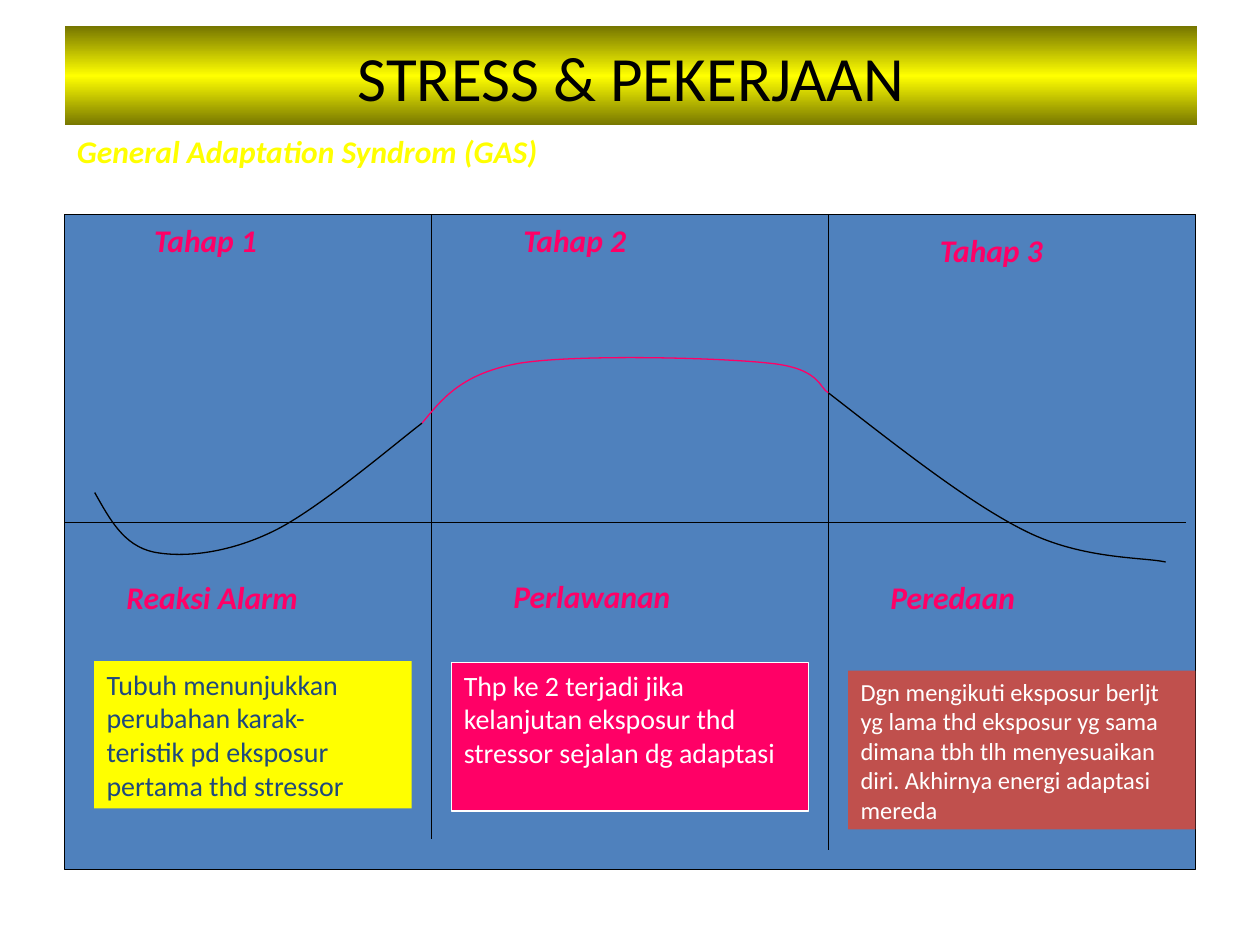
"""Build a slide on the three stages of the General Adaptation Syndrome."""
from copy import deepcopy
from dataclasses import dataclass
from typing import Optional

from lxml import etree
from pptx import Presentation
from pptx import util as u
from pptx.dml.color import RGBColor
from pptx.enum import shapes, text
from pptx.oxml.ns import qn

BLACK = RGBColor(0x00, 0x00, 0x00)
WHITE = RGBColor(0xFF, 0xFF, 0xFF)
BLUE = RGBColor(0x4F, 0x81, 0xBD)
NAVY = RGBColor(0x1F, 0x49, 0x7D)
PINK = RGBColor(0xFF, 0x00, 0x66)
RED = RGBColor(0xC0, 0x50, 0x4D)
YELLOW = RGBColor(0xFF, 0xFF, 0x00)
OLIVE = RGBColor(0x76, 0x76, 0x00)
FONT = "Calibri"
LINE_WIDTH = u.Pt(0.75)


@dataclass
class Box:
    left: float
    top: float
    width: float
    height: float

    def emu(self) -> list[int]:
        return [u.Cm(v) for v in (self.left, self.top, self.width, self.height)]


@dataclass
class Heading:
    text: str
    box: Box
    color: RGBColor = PINK


@dataclass
class Note:
    text: str
    box: Box
    fill: RGBColor
    color: RGBColor
    size: int
    line: Optional[RGBColor] = None
    right_inset: float = 0.25


@dataclass
class Curve:
    points: list[tuple[float, float]]
    color: RGBColor


PANEL = Box(1.3, 4.32, 22.8, 13.21)
TITLE = Box(1.31, 0.53, 22.82, 2)
AXES = [
    (1.3, 10.53, 23.9, 10.53),
    (8.7, 4.32, 8.7, 16.92),
    (16.7, 4.32, 16.7, 17.13),
]
HEADINGS = [
    Heading("General Adaptation Syndrom (GAS)", Box(1.3, 2.54, 9.8, 1.78), YELLOW),
    Heading("Tahap 1", Box(2.86, 4.33, 3.63, 1.02)),
    Heading("Tahap 2", Box(10.3, 4.33, 3.99, 1.02)),
    Heading("Tahap 3", Box(18.7, 4.53, 3.61, 1.02)),
    Heading("Reaksi Alarm", Box(2.3, 11.53, 5.41, 1.02)),
    Heading("Perlawanan", Box(10.1, 11.51, 4.6, 1.02)),
    Heading("Peredaan", Box(17.7, 11.53, 3.81, 1.02)),
]
NOTES = [
    Note("Tubuh menunjukkan perubahan karak- teristik pd eksposur pertama thd stressor",
         Box(1.9, 13.33, 6.4, 2.97), YELLOW, NAVY, 16, right_inset=0.9),
    Note("Thp ke 2 terjadi jika kelanjutan eksposur thd stressor sejalan dg adaptasi",
         Box(9.1, 13.35, 7.2, 3), PINK, WHITE, 16, WHITE),
    Note("Dgn mengikuti eksposur berljt yg lama thd eksposur yg sama dimana tbh tlh "
         "menyesuaikan diri. Akhirnya energi adaptasi mereda",
         Box(17.1, 13.52, 7, 3.2), RED, WHITE, 14),
]
CURVES = [
    Curve([(1.91, 9.93), (2.21, 10.46), (2.49, 11), (3.1, 11.13), (3.71, 11.25),
           (4.6, 11.15), (5.49, 10.72), (6.4, 10.29), (8.03, 8.89), (8.51, 8.53)], BLACK),
    Curve([(8.51, 8.53), (8.92, 8.03), (9.32, 7.52), (10.49, 7.32), (11.66, 7.14),
           (14.48, 7.21), (15.49, 7.32), (16.54, 7.42), (16.51, 7.82), (16.7, 7.92)], PINK),
    Curve([(16.7, 7.92), (18.14, 9.04), (19.56, 10.16), (20.7, 10.72),
           (21.84, 11.28), (23.04, 11.23), (23.5, 11.33)], BLACK),
]


def write(sp, content: str, size: int, color: RGBColor, strong: bool = False,
          align=text.PP_ALIGN.LEFT, anchor=text.MSO_ANCHOR.TOP) -> None:
    """Put formatted text into a shape."""
    tf = sp.text_frame
    tf.text = content
    tf.word_wrap = True
    tf.auto_size = text.MSO_AUTO_SIZE.NONE
    tf.vertical_anchor = anchor
    p = tf.paragraphs[0]
    p.alignment = align
    for r in p.runs:
        r.font.name, r.font.size, r.font.color.rgb = FONT, u.Pt(size), color
        r.font.bold = r.font.italic = strong


def set_line(sp, color: Optional[RGBColor]) -> None:
    """Outline a shape, or leave it without an outline."""
    if color is None:
        sp.line.fill.background()
    else:
        sp.line.color.rgb = color
        sp.line.width = LINE_WIDTH


def add_title(s) -> None:
    """Format the title as a banner with a mirrored gradient."""
    sp = s.shapes.title
    sp.left, sp.top, sp.width, sp.height = TITLE.emu()
    sp.fill.gradient()
    sp.fill.gradient_angle = 90
    first, last = sp.fill.gradient_stops
    first.color.rgb, last.color.rgb = OLIVE, YELLOW
    first.position, last.position = 0, 0.5
    stops = sp._element.spPr.find(".//" + qn("a:gsLst"))
    end = deepcopy(stops[0])
    end.set("pos", "100000")
    stops.append(end)
    write(sp, "STRESS & PEKERJAAN", 36, BLACK,
          align=text.PP_ALIGN.CENTER, anchor=text.MSO_ANCHOR.MIDDLE)


def add_rect(s, box: Box, fill: RGBColor, line: Optional[RGBColor]):
    """Add a flat rectangle."""
    sp = s.shapes.add_shape(shapes.MSO_SHAPE.RECTANGLE, *box.emu())
    sp.shadow.inherit = False
    sp.fill.solid()
    sp.fill.fore_color.rgb = fill
    set_line(sp, line)
    return sp


def add_note(s, note: Note) -> None:
    """Add a filled rectangle with its explanation."""
    sp = add_rect(s, note.box, note.fill, note.line)
    write(sp, note.text, note.size, note.color)
    sp.text_frame.margin_right = u.Cm(note.right_inset)


def add_axis(s, x1: float, y1: float, x2: float, y2: float) -> None:
    """Add a straight black line."""
    sp = s.shapes.add_connector(shapes.MSO_CONNECTOR.STRAIGHT,
                                u.Cm(x1), u.Cm(y1), u.Cm(x2), u.Cm(y2))
    set_line(sp, BLACK)
    etree.SubElement(sp._element.spPr, qn("a:effectLst"))


def add_curve(s, curve: Curve) -> None:
    """Draw a chain of cubic curves as one open outline."""
    start, *rest = [(u.Cm(x), u.Cm(y)) for x, y in curve.points]
    builder = s.shapes.build_freeform(*start)
    builder.add_line_segments(rest, close=False)
    sp = builder.convert_to_shape()
    sp.shadow.inherit = False
    sp.fill.background()
    set_line(sp, curve.color)
    segments = list(sp._element.spPr.iter(qn("a:lnTo")))
    outline = segments[0].getparent()
    for i in range(0, len(segments), 3):
        cubic = etree.SubElement(outline, qn("a:cubicBezTo"))
        for segment in segments[i:i + 3]:
            cubic.append(segment[0])
            outline.remove(segment)


def main() -> None:
    """Assemble and save the slide."""
    prs = Presentation()
    prs.slide_width, prs.slide_height = u.Cm(25.4), u.Cm(19.05)
    s = prs.slides.add_slide(prs.slide_layouts[5])
    add_title(s)
    add_rect(s, PANEL, BLUE, BLACK)
    for axis in AXES:
        add_axis(s, *axis)
    for h in HEADINGS:
        write(s.shapes.add_textbox(*h.box.emu()), h.text, 18, h.color, strong=True)
    for note in NOTES:
        add_note(s, note)
    for curve in CURVES:
        add_curve(s, curve)
    prs.save("out.pptx")


if __name__ == "__main__":
    main()
